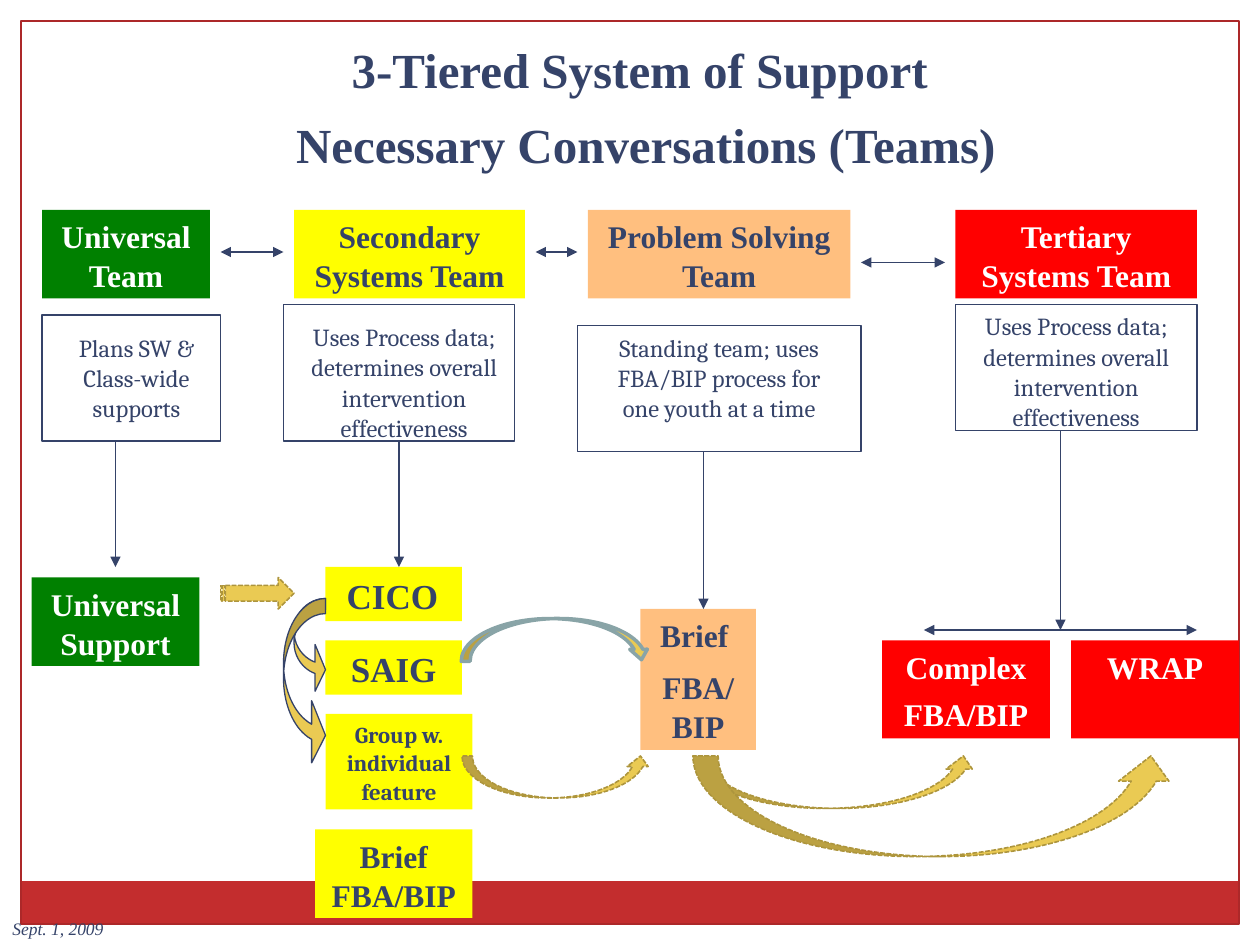
from dataclasses import dataclass
from typing import Optional

from lxml.etree import SubElement
from pptx import Presentation
from pptx.dml.color import RGBColor
from pptx.enum.dml import MSO_LINE
from pptx.enum.shapes import MSO_CONNECTOR, MSO_SHAPE
from pptx.enum.text import MSO_ANCHOR, PP_ALIGN
from pptx.oxml.ns import qn
from pptx.util import Pt

NAVY = RGBColor(0x35, 0x43, 0x69)
WHITE = RGBColor(0xFF, 0xFF, 0xFF)
GREEN = RGBColor(0x00, 0x80, 0x00)
YELLOW = RGBColor(0xFF, 0xFF, 0x00)
ORANGE = RGBColor(0xFF, 0x80, 0x00)
RED = RGBColor(0xFF, 0x00, 0x00)
BAR_RED = RGBColor(0xC3, 0x2D, 0x2E)
FRAME_RED = RGBColor(0xAC, 0x28, 0x29)
GOLD = RGBColor(0xEA, 0xCA, 0x53)
DARK_GOLD = RGBColor(0xAD, 0x95, 0x3D)
SLATE = RGBColor(0x89, 0xA4, 0xA7)

SERIF = "Times New Roman"
BODY = "Cambria"
PROCESS = "Uses Process data; determines overall intervention effectiveness"


@dataclass
class Place:
    left: float
    top: float
    width: float
    height: float

    def points(self) -> tuple:
        return Pt(self.left), Pt(self.top), Pt(self.width), Pt(self.height)


@dataclass
class Card:
    place: Place
    text: str
    fill: RGBColor
    color: RGBColor = NAVY
    size: float = 18
    font: str = SERIF
    gap: float = 0
    align: PP_ALIGN = PP_ALIGN.CENTER
    alpha: Optional[int] = None


@dataclass
class Duty:
    frame: Place
    label: Place
    text: str


@dataclass
class Link:
    start: tuple
    end: tuple
    double: bool = False


@dataclass
class Arrow:
    kind: MSO_SHAPE
    place: Place
    line: RGBColor = DARK_GOLD
    weight: float = 0.9
    dashed: bool = True
    adjustments: tuple = ()
    rotation: float = 0
    flipped: bool = False


def write(box, text: str, *, size: float, font: str = SERIF, color: RGBColor = NAVY,
          bold: bool = False, italic: bool = False, gap: float = 0,
          align: PP_ALIGN = PP_ALIGN.CENTER) -> None:
    frame = box.text_frame
    frame.word_wrap = True
    frame.vertical_anchor = MSO_ANCHOR.TOP
    for index, words in enumerate(text.split("\n")):
        para = frame.add_paragraph() if index else frame.paragraphs[0]
        para.text = words
        para.alignment = align
        para.line_spacing = 1.03
        para.space_before = Pt(gap if index else 0)
        for span in para.runs:
            span.font.name = font
            span.font.size = Pt(size)
            span.font.bold = bold
            span.font.italic = italic
            span.font.color.rgb = color


def add_label(page, place: Place, text: str, **style) -> None:
    write(page.shapes.add_textbox(*place.points()), text, **style)


def add_shape(page, kind: MSO_SHAPE, place: Place, *, fill: Optional[RGBColor] = None,
              line: Optional[RGBColor] = None, weight: float = 0.75):
    shape = page.shapes.add_shape(kind, *place.points())
    shape.shadow.inherit = False
    if fill is None:
        shape.fill.background()
    else:
        shape.fill.solid()
        shape.fill.fore_color.rgb = fill
    if line is None:
        shape.line.fill.background()
    else:
        shape.line.color.rgb = line
        shape.line.width = Pt(weight)
    return shape


def add_card(page, card: Card) -> None:
    box = add_shape(page, MSO_SHAPE.RECTANGLE, card.place, fill=card.fill)
    if card.alpha is not None:
        color = box._element.spPr.find(qn("a:solidFill")).find(qn("a:srgbClr"))
        SubElement(color, qn("a:alpha")).set("val", str(card.alpha * 1000))
    write(box, card.text, size=card.size, font=card.font, color=card.color,
          bold=True, gap=card.gap, align=card.align)


def add_duty(page, duty: Duty) -> None:
    add_label(page, duty.label, duty.text, size=14, font=BODY)
    add_shape(page, MSO_SHAPE.RECTANGLE, duty.frame, line=NAVY)


def add_link(page, link: Link) -> None:
    points = [Pt(value) for value in (*link.start, *link.end)]
    connector = page.shapes.add_connector(MSO_CONNECTOR.STRAIGHT, *points)
    connector.line.color.rgb = NAVY
    connector.line.width = Pt(0.75)
    outline = connector.line._get_or_add_ln()
    for end in ("a:headEnd", "a:tailEnd") if link.double else ("a:tailEnd",):
        SubElement(outline, qn(end)).set("type", "triangle")
    SubElement(connector._element.spPr, qn("a:effectLst"))


def add_arrow(page, arrow: Arrow) -> None:
    shape = add_shape(page, arrow.kind, arrow.place, fill=GOLD,
                      line=arrow.line, weight=arrow.weight)
    if arrow.dashed:
        shape.line.dash_style = MSO_LINE.SQUARE_DOT
    for index, value in enumerate(arrow.adjustments):
        shape.adjustments[index] = value
    shape.rotation = arrow.rotation
    if arrow.flipped:
        shape._element.spPr.find(qn("a:xfrm")).set("flipV", "1")


CARDS = [
    Card(Place(24, 120, 96, 50.5), "Universal\vTeam", GREEN, WHITE),
    Card(Place(168, 120, 132, 50.5), "Secondary Systems Team", YELLOW),
    Card(Place(336, 120, 150, 50.5), "Problem Solving Team", ORANGE, alpha=50),
    Card(Place(546, 120, 138, 50.5), "Tertiary Systems Team", RED, WHITE),
    Card(Place(18, 330, 96, 50.5), "Universal Support", GREEN, WHITE),
    Card(Place(186, 324, 78, 31), " CICO", YELLOW, size=20, align=PP_ALIGN.LEFT),
    Card(Place(186, 366, 78, 31), "SAIG", YELLOW, size=20),
    Card(Place(186, 408, 84, 54.5), "Group w. individual\nfeature", YELLOW,
         size=13, font=BODY),
    Card(Place(180, 474, 90, 50.5), "Brief FBA/BIP", YELLOW),
    Card(Place(366, 348, 66, 80.5), "Brief \nFBA/BIP", ORANGE, gap=7.2, alpha=50),
    Card(Place(504, 366, 96, 56), "Complex\nFBA/BIP", RED, WHITE, gap=4.5),
    Card(Place(612, 366, 96, 56), "WRAP", RED, WHITE),
]

DUTIES = [
    Duty(Place(24, 180, 102, 72), Place(30, 186, 96, 58.5),
         "Plans SW & Class-wide supports"),
    Duty(Place(162, 174, 132, 78), Place(162, 180, 138, 75), PROCESS),
    Duty(Place(330, 186, 162, 72), Place(336, 186, 150, 58.5),
         "Standing team; uses FBA/BIP process for one youth at a time"),
    Duty(Place(546, 174, 138, 72), Place(546, 174, 138, 75), PROCESS),
]

LINKS = [
    Link((66, 252), (66, 324)),
    Link((228, 252), (228, 324)),
    Link((402, 258), (402, 348)),
    Link((606, 246), (606, 360)),
    Link((528, 360), (684, 360), double=True),
    Link((126, 144), (162, 144), double=True),
    Link((306, 144), (330, 144), double=True),
    Link((492, 150), (540, 150), double=True),
]

DROP = (0.36, 1.48, 0.33)
ARROWS = [
    Arrow(MSO_SHAPE.CURVED_RIGHT_ARROW, Place(168, 342, 18, 54), NAVY, 0.75, False, DROP),
    Arrow(MSO_SHAPE.CURVED_RIGHT_ARROW, Place(162, 342, 24, 96), NAVY, 0.75, False, DROP),
    Arrow(MSO_SHAPE.STRIPED_RIGHT_ARROW, Place(126, 330, 42, 18)),
    Arrow(MSO_SHAPE.CURVED_UP_ARROW, Place(396, 432, 162, 30)),
    Arrow(MSO_SHAPE.CURVED_UP_ARROW, Place(396, 432, 276, 57.5)),
    Arrow(MSO_SHAPE.CURVED_UP_ARROW, Place(264, 432, 108, 24)),
    Arrow(MSO_SHAPE.CURVED_UP_ARROW, Place(263.5, 353.5, 108, 24), SLATE, 2, False,
          (0.21, 0.42, 0.25), rotation=359.5, flipped=True),
]


def main() -> None:
    deck = Presentation()
    deck.slide_width, deck.slide_height = Pt(720), Pt(540)
    page = deck.slides.add_slide(deck.slide_layouts[6])
    add_shape(page, MSO_SHAPE.RECTANGLE, Place(12, 503.5, 695.5, 24.5), fill=BAR_RED)
    add_shape(page, MSO_SHAPE.RECTANGLE, Place(12, 12, 696, 516), line=FRAME_RED)
    add_label(page, Place(54, 18, 630, 85),
              "3-Tiered System of Support \nNecessary Conversations (Teams)",
              size=28, bold=True, gap=8.4)
    for items, draw in ((CARDS, add_card), (LINKS, add_link),
                        (DUTIES, add_duty), (ARROWS, add_arrow)):
        for item in items:
            draw(page, item)
    add_label(page, Place(0, 520.5, 84, 19.5), "Sept. 1, 2009", size=10,
              italic=True, align=PP_ALIGN.LEFT)
    deck.save("out.pptx")


if __name__ == "__main__":
    main()
